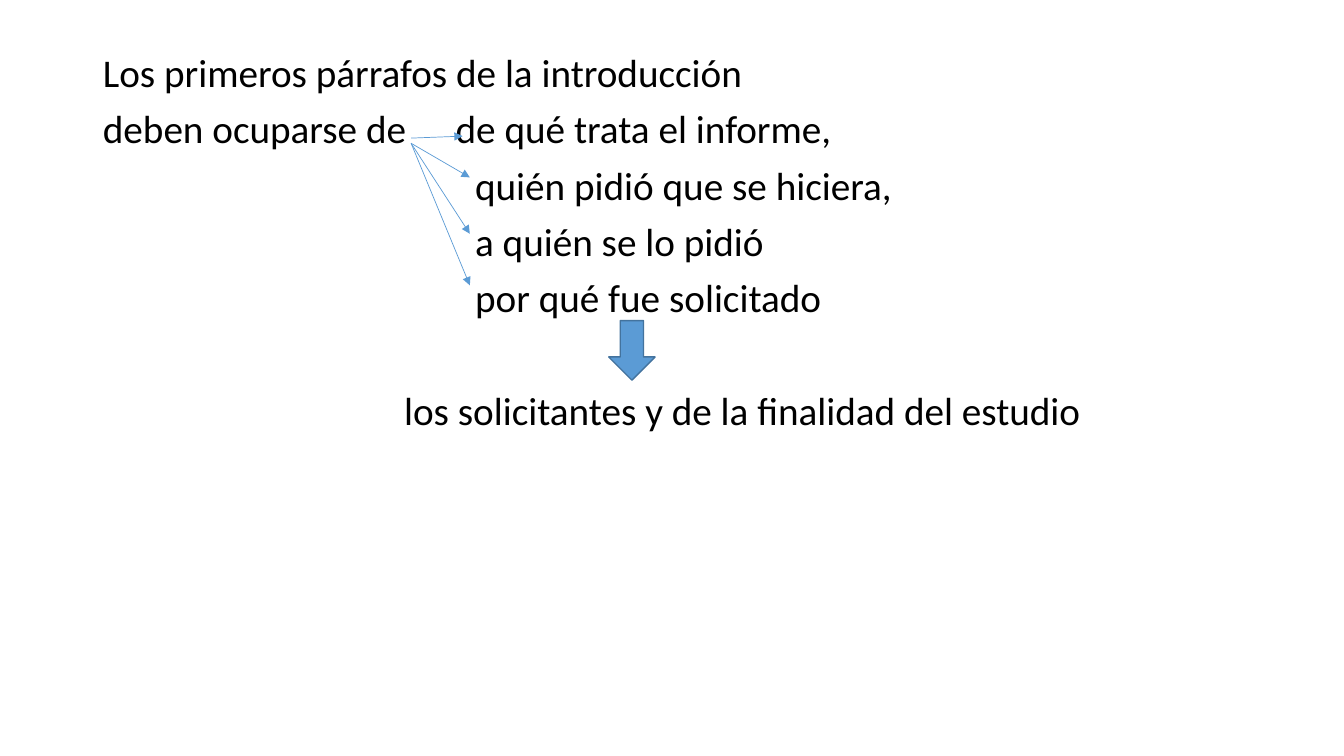
"""Build a slide on what the opening paragraphs of a report should cover."""
from pptx import Presentation
from pptx.dml.color import RGBColor
from pptx.enum.shapes import MSO_CONNECTOR, MSO_SHAPE
from pptx.enum.text import MSO_ANCHOR, MSO_AUTO_SIZE
from pptx.oxml.ns import qn
from pptx.util import Cm, Pt
from lxml.etree import SubElement

BLACK = RGBColor(0x00, 0x00, 0x00)
BLUE = RGBColor(0x5B, 0x9B, 0xD5)
DARK_BLUE = RGBColor(0x43, 0x73, 0x9E)

TOPIC_INDENT = Cm(9.38)
CLOSING_INDENT = Cm(7.59)

deck = Presentation()
deck.slide_width, deck.slide_height = Cm(33.87), Cm(19.05)
page = deck.slides.add_slide(deck.slide_layouts[1])
title = page.shapes.title
title.element.getparent().remove(title.element)

body = page.placeholders[1]
body_place = {"left": Cm(2.34), "top": Cm(1.22), "width": Cm(29.21), "height": Cm(15.95)}
for name, value in body_place.items():
    setattr(body, name, value)
frame = body.text_frame
frame_format = {
    "word_wrap": True,
    "auto_size": MSO_AUTO_SIZE.NONE,
    "vertical_anchor": MSO_ANCHOR.TOP,
}
for name, value in frame_format.items():
    setattr(frame, name, value)

lines = [
    ("Los primeros párrafos de la introducción", 0, 10),
    ("deben ocuparse de\tde qué trata el informe,", 0, 10),
    ("quién pidió que se hiciera,", TOPIC_INDENT, 10),
    ("a quién se lo pidió", TOPIC_INDENT, 10),
    ("por qué fue solicitado", TOPIC_INDENT, 10),
    ("los solicitantes y de la finalidad del estudio", CLOSING_INDENT, 50.5),
]
font_format = {"name": "Calibri", "size": Pt(28)}
for index, (text, indent, space) in enumerate(lines):
    para = frame.paragraphs[0] if index == 0 else frame.add_paragraph()
    para.line_spacing = 0.9
    para.space_before = Pt(space)
    span = para.add_run()
    span.text = text
    span.font.color.rgb = BLACK
    for name, value in font_format.items():
        setattr(span.font, name, value)
    properties = para._p.get_or_add_pPr()
    properties.set("marL", str(int(indent)))
    properties.set("indent", "0")
    SubElement(properties, qn("a:buNone"))
    if "\t" in text:
        tabs = SubElement(properties, qn("a:tabLst"))
        SubElement(tabs, qn("a:tab"), pos=str(int(TOPIC_INDENT)), algn="l")

topic_arrows = [
    (3.48, 11.66, 3.43),
    (3.61, 11.84, 4.47),
    (3.61, 11.84, 5.89),
    (3.61, 11.84, 7.19),
]
for start_y, end_x, end_y in topic_arrows:
    arrow = page.shapes.add_connector(
        MSO_CONNECTOR.STRAIGHT, Cm(10.36), Cm(start_y), Cm(end_x), Cm(end_y)
    )
    arrow.line.color.rgb = BLUE
    arrow.line.width = Pt(0.5)
    SubElement(arrow.line._get_or_add_ln(), qn("a:tailEnd"), type="triangle")
    SubElement(arrow._element.spPr, qn("a:effectLst"))

down_arrow = page.shapes.add_shape(
    MSO_SHAPE.DOWN_ARROW, Cm(15.34), Cm(8.08), Cm(1.17), Cm(1.5)
)
down_arrow.shadow.inherit = False
down_arrow.fill.solid()
down_arrow.fill.fore_color.rgb = BLUE
down_arrow.line.color.rgb = DARK_BLUE
down_arrow.line.width = Pt(1)

deck.save("out.pptx")
